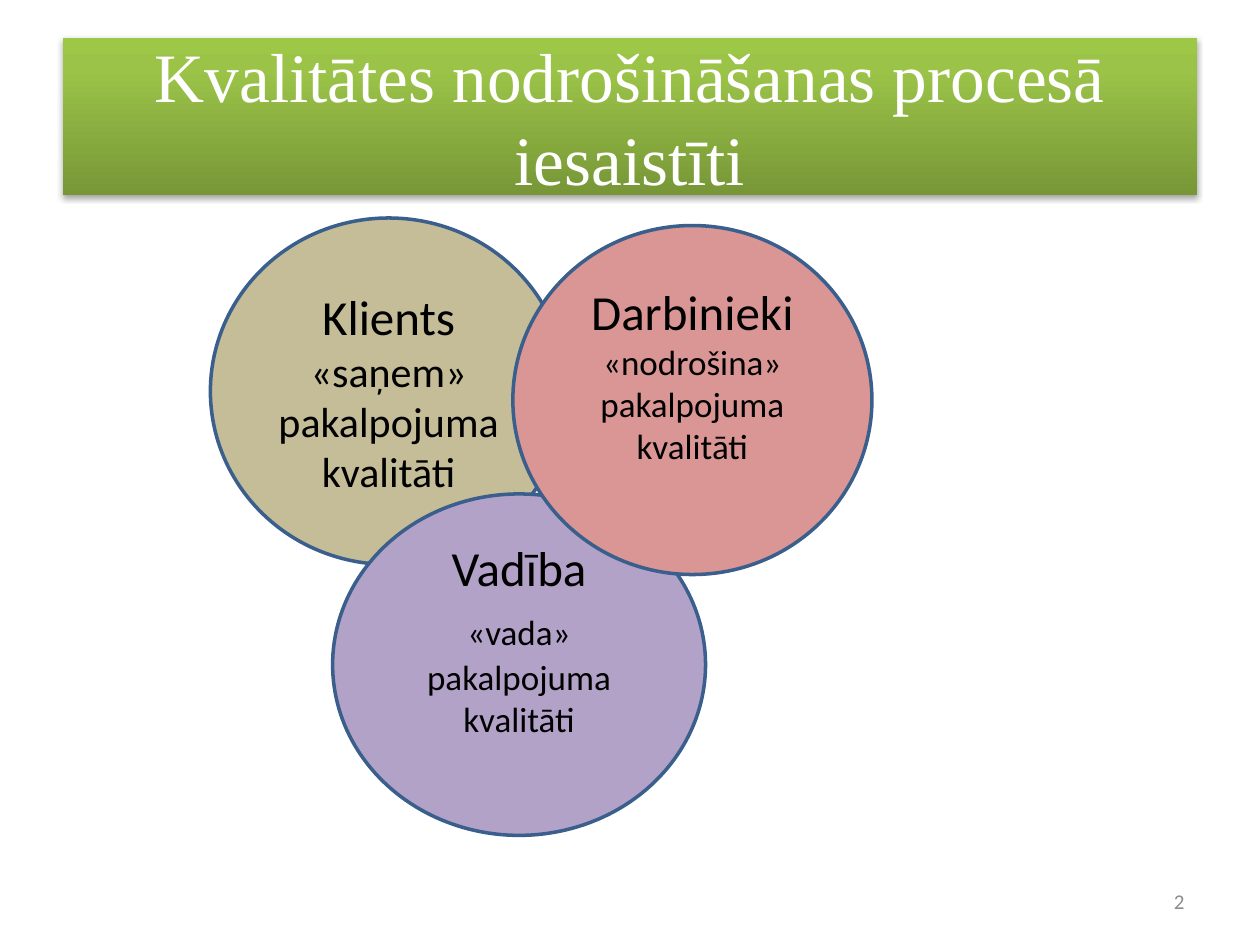
from lxml import etree
from pptx import Presentation
from pptx.dml.color import RGBColor
from pptx.enum.shapes import MSO_SHAPE
from pptx.enum.text import MSO_ANCHOR, PP_ALIGN
from pptx.oxml import parse_xml
from pptx.oxml.ns import nsdecls, qn
from pptx.util import Inches, Pt

RECT, OVAL = MSO_SHAPE.RECTANGLE, MSO_SHAPE.OVAL
MIDDLE = MSO_ANCHOR.MIDDLE
CENTER, RIGHT = PP_ALIGN.CENTER, PP_ALIGN.RIGHT

THEME = {
    "heading_font": "Times New Roman", "body_font": "Calibri",
    "white": "FFFFFF", "black": "000000", "gray": "8C8C8C",
    "outline": "3A5F8C", "outline_width": 2,
    "banner_stops": [(0, "779737"), (80, "9BC348"), (100, "9DC746")],
    "title_size": 39.6, "role_size": 28,
    "large_size": 24, "small_size": 20, "number_size": 12,
}
LARGE, SMALL, ROLE = THEME["large_size"], THEME["small_size"], THEME["role_size"]

# Content
TITLE = "Kvalitātes nodrošināšanas procesā iesaistīti"
TITLE_BOX = (0.5, 0.3, 9, 1.25)
NUMBER = "2"
NUMBER_BOX = (7.17, 6.95, 2.33, 0.4)
# Back to front: role, description runs, box, fill, (top, bottom) insets
PARTIES = [
    ("Klients", [("«saņem» pakalpojuma kvalitāti", LARGE)],
     (1.67, 1.73, 2.83, 2.75), "C4BD97", (0.05, 0.05)),
    ("Vadība", [("«vada»", SMALL), (" ", ROLE), ("pakalpojuma kvalitāti", SMALL)],
     (2.64, 3.92, 2.96, 2.71), "B3A2C7", (0, 0.41)),
    ("Darbinieki", [("«nodrošina» pakalpojuma kvalitāti", SMALL)],
     (4.07, 1.79, 2.85, 2.77), "D99694", (0, 0.41)),
]


def rgb(color):
    return RGBColor.from_string(color)


def write(frame, paragraphs, font, color, align=CENTER):
    """Fill a frame with paragraphs, each a list of (text, size) runs."""
    frame.word_wrap = True
    frame.vertical_anchor = MIDDLE
    for index, runs in enumerate(paragraphs):
        paragraph = frame.add_paragraph() if index else frame.paragraphs[0]
        paragraph.alignment = align
        for text, size in runs:
            run = paragraph.add_run()
            run.text = text
            run.font.name = font
            run.font.size = Pt(size)
            run.font.color.rgb = rgb(color)


def add_plain_shape(slide, kind, box):
    shape = slide.shapes.add_shape(kind, *map(Inches, box))
    shape.shadow.inherit = False
    return shape


def add_banner(slide):
    banner = add_plain_shape(slide, RECT, TITLE_BOX)
    banner.line.fill.background()
    banner.fill.gradient()
    banner.fill.gradient_angle = 90
    properties = banner.element.spPr
    # Three gradient stops
    stops = properties.find(qn("a:gradFill")).find(qn("a:gsLst"))
    for stop in list(stops):
        stops.remove(stop)
    for position, color in THEME["banner_stops"]:
        stop = etree.SubElement(stops, qn("a:gs"), pos=str(position * 1000))
        etree.SubElement(stop, qn("a:srgbClr"), val=color)
    # Soft shadow below the banner
    properties.find(qn("a:effectLst")).append(parse_xml(
        f'<a:outerShdw {nsdecls("a")} blurRad="{Pt(3.1)}" dist="{Pt(1.8)}" '
        'dir="5400000" rotWithShape="0"><a:srgbClr val="000000">'
        '<a:alpha val="35000"/></a:srgbClr></a:outerShdw>'))
    write(banner.text_frame, [[(TITLE, THEME["title_size"])]],
          THEME["heading_font"], THEME["white"])


def add_party(slide, role, description, box, fill, insets):
    circle = add_plain_shape(slide, OVAL, box)
    circle.fill.solid()
    circle.fill.fore_color.rgb = rgb(fill)
    circle.line.color.rgb = rgb(THEME["outline"])
    circle.line.width = Pt(THEME["outline_width"])
    frame = circle.text_frame
    frame.margin_top, frame.margin_bottom = map(Inches, insets)
    write(frame, [[(role, ROLE)], description], THEME["body_font"], THEME["black"])


def main():
    deck = Presentation()
    deck.slide_width, deck.slide_height = Inches(10), Inches(7.5)
    slide = deck.slides.add_slide(deck.slide_layouts[6])

    add_banner(slide)
    for party in PARTIES:
        add_party(slide, *party)

    # Slide number
    number = slide.shapes.add_textbox(*map(Inches, NUMBER_BOX))
    write(number.text_frame, [[(NUMBER, THEME["number_size"])]],
          THEME["body_font"], THEME["gray"], RIGHT)

    deck.save("out.pptx")


if __name__ == "__main__":
    main()
